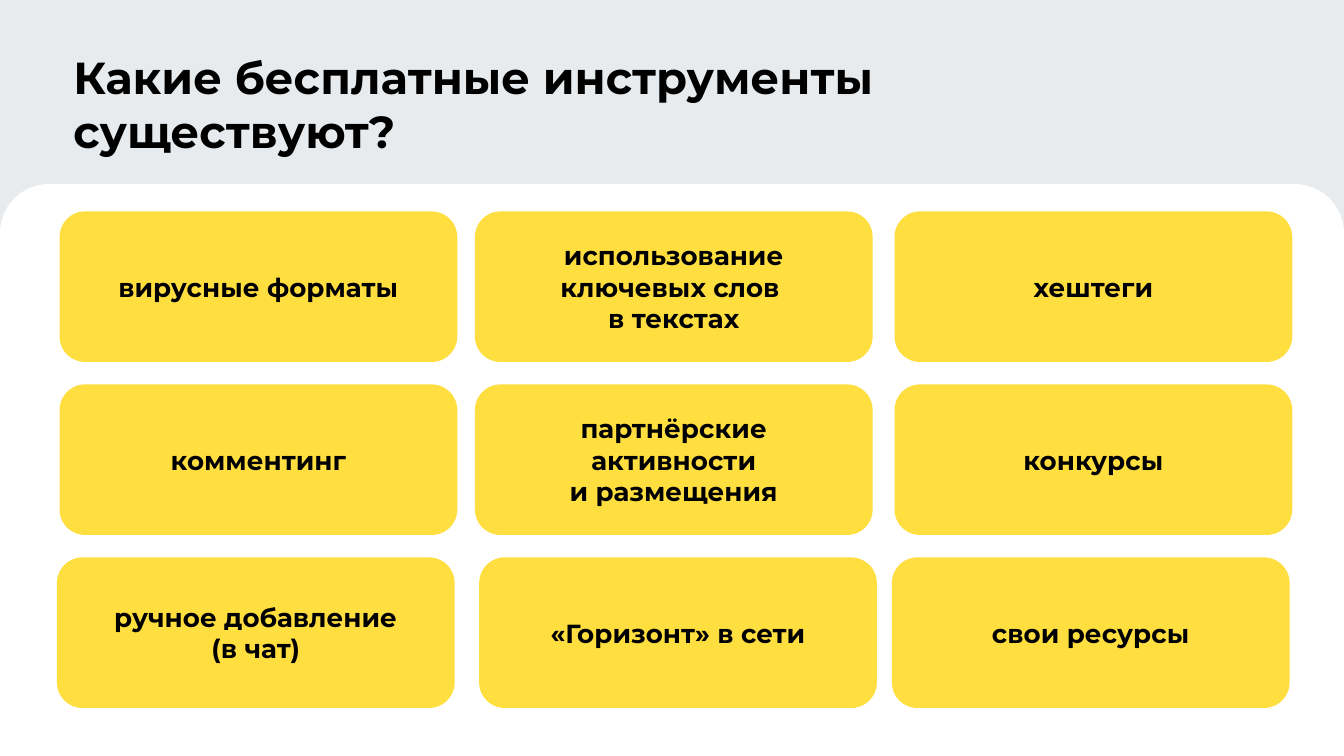
from pptx import Presentation
from pptx.dml.color import RGBColor
from pptx.enum.shapes import MSO_SHAPE as Shape
from pptx.enum.text import MSO_ANCHOR as Anchor, PP_ALIGN as Align
from pptx.util import Cm, Pt

COLORS = {"backdrop": "E8EBED", "panel": "FFFFFF", "card": "FFDE40", "text": "000000"}


def rgb(name):
    return RGBColor.from_string(COLORS[name])


def write(shape, text, size, align, anchor):
    frame = shape.text_frame
    frame.word_wrap = True
    frame.vertical_anchor = anchor
    frame.margin_left = frame.margin_right = Cm(0.25)
    frame.margin_top = frame.margin_bottom = Cm(0.25)
    frame.text = text
    paragraph = frame.paragraphs[0]
    paragraph.alignment = align
    paragraph.font.name = "Montserrat"
    paragraph.font.size = Pt(size)
    paragraph.font.bold = True
    paragraph.font.color.rgb = rgb("text")


prs = Presentation()
prs.slide_width, prs.slide_height = Cm(25.4), Cm(14.29)
slide = prs.slides.add_slide(prs.slide_layouts[6])
slide.background.fill.solid()
slide.background.fill.fore_color.rgb = rgb("backdrop")

# White panel with rounded top corners
panel = slide.shapes.add_shape(Shape.ROUND_2_SAME_RECTANGLE, 0, Cm(3.48), Cm(25.4), Cm(10.81))
panel.adjustments[0] = 0.086
panel.adjustments[1] = 0
panel.shadow.inherit = False
panel.fill.solid()
panel.fill.fore_color.rgb = rgb("panel")
panel.line.fill.background()

# Title
title = slide.shapes.add_textbox(Cm(1.14), Cm(0.69), Cm(18.24), Cm(1.45))
write(title, "Какие бесплатные инструменты существуют?", 24, Align.LEFT, Anchor.TOP)

# Cards with the tools: left edges of each row, then its labels (\v is a line break)
upper_lefts = (1.14, 8.99, 16.92)
lower_lefts = (1.09, 9.07, 16.87)
tool_rows = [
    (upper_lefts, ("вирусные форматы", "использование ключевых слов \vв текстах", "хештеги")),
    (upper_lefts, ("комментинг", "партнёрские активности\vи размещения", "конкурсы")),
    (lower_lefts, ("ручное добавление\v(в чат)", "«Горизонт» в сети", "свои ресурсы")),
]
for row, (lefts, tools) in enumerate(tool_rows):
    for left, tool in zip(lefts, tools):
        card = slide.shapes.add_shape(
            Shape.ROUNDED_RECTANGLE, Cm(left), Cm(4.01 + row * 3.27), Cm(7.49), Cm(2.82))
        card.adjustments[0] = 0.167
        card.shadow.inherit = False
        card.fill.solid()
        card.fill.fore_color.rgb = rgb("card")
        card.line.color.rgb = rgb("card")
        card.line.width = Pt(0.75)
        write(card, tool, 14, Align.CENTER, Anchor.MIDDLE)

prs.save("out.pptx")
